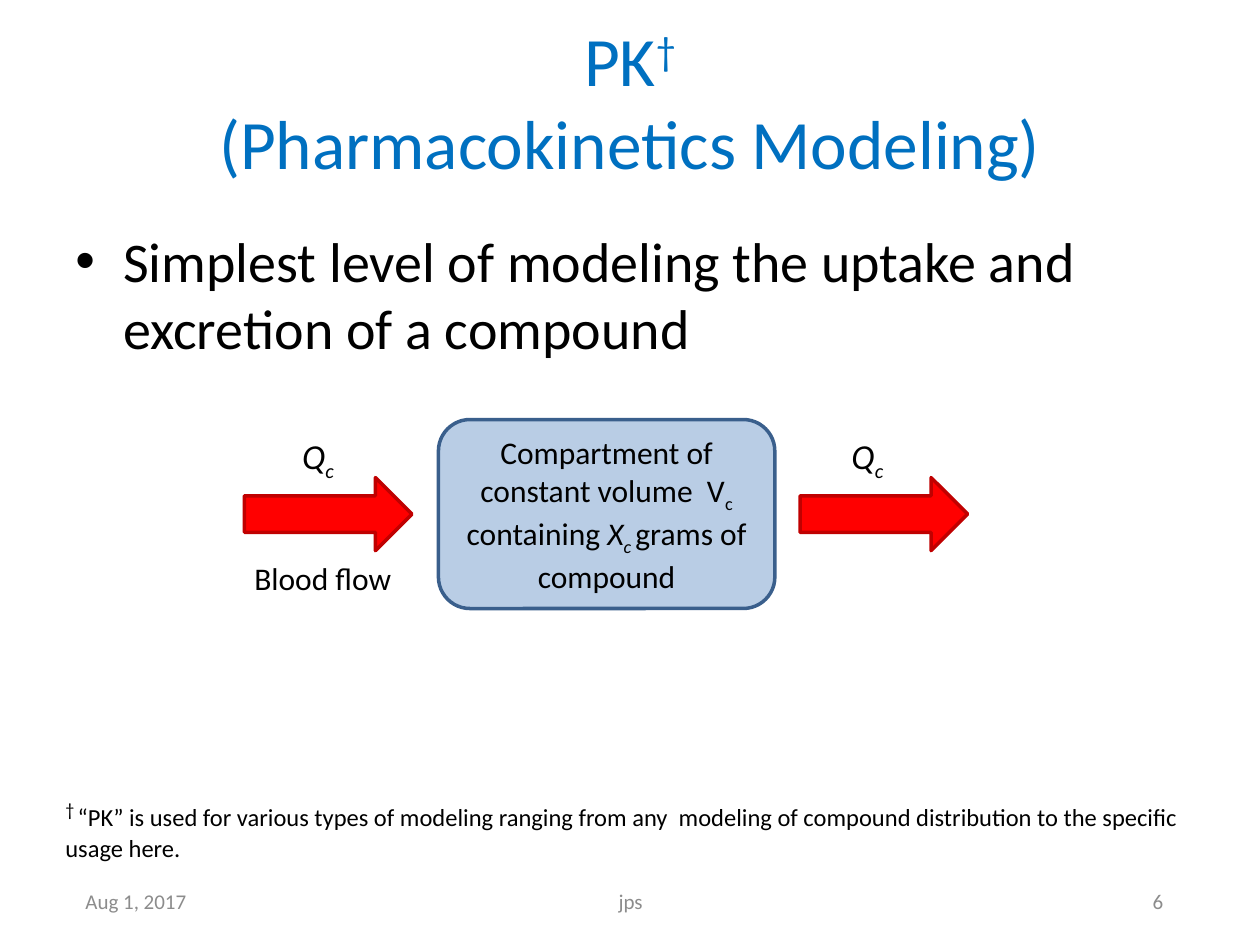
"""Build the pharmacokinetics modeling slide with its compartment diagram."""
from lxml.etree import SubElement
from pptx import Presentation
from pptx.dml.color import RGBColor
from pptx.enum.shapes import MSO_SHAPE as Shape
from pptx.enum.text import MSO_ANCHOR as Anchor, PP_ALIGN as Align
from pptx.oxml.ns import qn
from pptx.util import Inches, Pt

COLORS = {
    "title": "0070C0",
    "text": "000000",
    "footer": "8C8C8C",
    "compartment": "B9CDE5",
    "compartment_line": "3A5F8C",
    "arrow": "FF0000",
    "arrow_line": "C00000",
}
SUPERSCRIPT, SUBSCRIPT = 30, -25

presentation = Presentation()
presentation.slide_width = Inches(10)
presentation.slide_height = Inches(7.5)
slide = presentation.slides.add_slide(presentation.slide_layouts[6])


def write(shape, runs, size, color="text", align=Align.LEFT, anchor=Anchor.TOP, wrap=True):
    """Fill a shape with runs of (text, baseline, italic, own size)."""
    frame = shape.text_frame
    frame.word_wrap = wrap
    frame.vertical_anchor = anchor
    paragraph = frame.paragraphs[0]
    paragraph.alignment = align
    for text, baseline, italic, own_size in runs:
        if text == "\n":
            paragraph.add_line_break()
            continue
        run = paragraph.add_run()
        run.text = text
        run.font.name = "Calibri"
        run.font.size = Pt(own_size or size)
        run.font.italic = italic
        run.font.color.rgb = RGBColor.from_string(COLORS[color])
        if baseline:
            run.font._element.set("baseline", str(baseline * 1000))
    return paragraph


def add_block(preset, left, top, width, height, color):
    """Add a filled and outlined preset shape."""
    shape = slide.shapes.add_shape(preset, Inches(left), Inches(top), Inches(width), Inches(height))
    shape.shadow.inherit = False
    shape.fill.solid()
    shape.fill.fore_color.rgb = RGBColor.from_string(COLORS[color])
    shape.line.color.rgb = RGBColor.from_string(COLORS[color + "_line"])
    shape.line.width = Pt(2)
    return shape


title = slide.shapes.add_textbox(Inches(0.5), Inches(0.17), Inches(9), Inches(1.25))
title_runs = [
    ("PK", 0, False, None),
    ("†", SUPERSCRIPT, False, None),
    ("\n", 0, False, None),
    ("(Pharmacokinetics Modeling)", 0, False, None),
]
write(title, title_runs, 39.6, "title", Align.CENTER, Anchor.MIDDLE)

body = slide.shapes.add_textbox(Inches(0.5), Inches(1.75), Inches(9), Inches(1.33))
body_text = "Simplest level of modeling the uptake and excretion of a compound"
bullet = write(body, [(body_text, 0, False, None)], 32)
properties = bullet._p.get_or_add_pPr()
properties.set("marL", str(Inches(0.38)))
properties.set("indent", str(Inches(-0.38)))
SubElement(properties, qn("a:buFont")).set("typeface", "Arial")
SubElement(properties, qn("a:buChar")).set("char", "•")

compartment = add_block(Shape.ROUNDED_RECTANGLE, 3.48, 3.33, 2.67, 1.5, "compartment")
compartment_runs = [
    ("Compartment of constant volume  V", 0, False, None),
    ("c", SUBSCRIPT, False, None),
    (" containing ", 0, False, None),
    ("X", 0, True, None),
    ("c ", SUBSCRIPT, True, None),
    ("grams of compound", 0, False, None),
]
write(compartment, compartment_runs, 18, align=Align.CENTER, anchor=Anchor.MIDDLE)

flow_runs = [("Q", 0, True, None), ("c", SUBSCRIPT, True, None)]
for arrow_left, label_left in [(1.94, 2.3), (6.35, 6.66)]:
    add_block(Shape.RIGHT_ARROW, arrow_left, 3.79, 1.33, 0.58, "arrow")
    flow_label = slide.shapes.add_textbox(Inches(label_left), Inches(3.4), Inches(0.46), Inches(0.44))
    write(flow_label, flow_runs, 20, wrap=False)

blood_flow = slide.shapes.add_textbox(Inches(1.92), Inches(4.39), Inches(1.3), Inches(0.4))
write(blood_flow, [("Blood flow", 0, False, None)], 18, wrap=False)

footnote = slide.shapes.add_textbox(Inches(0.42), Inches(6.26), Inches(9.25), Inches(0.57))
footnote_text = (
    "“PK” is used for various types of modeling ranging from any  modeling "
    "of compound distribution to the specific usage here."
)
footnote_runs = [
    ("†", SUPERSCRIPT, False, 18),
    (" ", SUPERSCRIPT, False, None),
    (footnote_text, 0, False, None),
]
write(footnote, footnote_runs, 14)

footers = [
    ("Aug 1, 2017", 0.58, 2.33, Align.LEFT),
    ("jps", 3.42, 3.17, Align.CENTER),
    ("6", 7, 2.33, Align.RIGHT),
]
for text, left, width, align in footers:
    footer = slide.shapes.add_textbox(Inches(left), Inches(6.95), Inches(width), Inches(0.4))
    write(footer, [(text, 0, False, None)], 12, "footer", align, Anchor.MIDDLE)

presentation.save("out.pptx")
